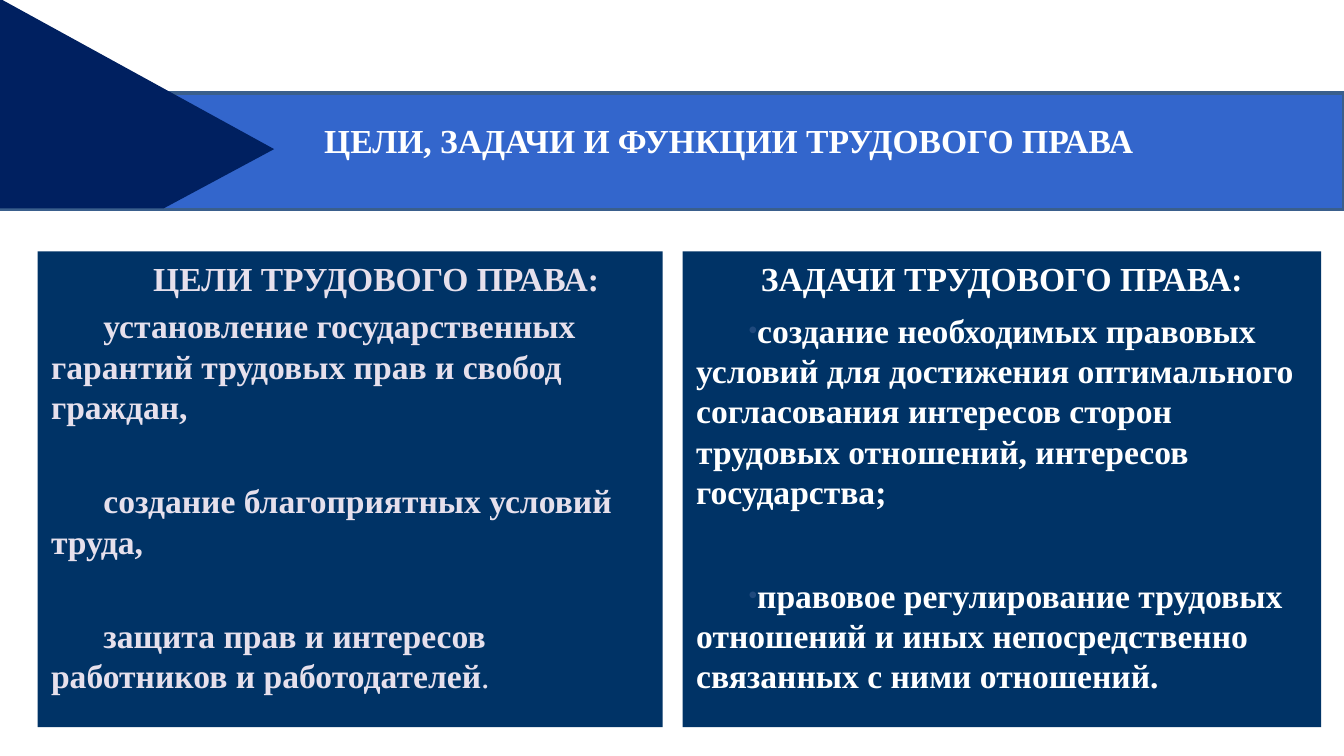
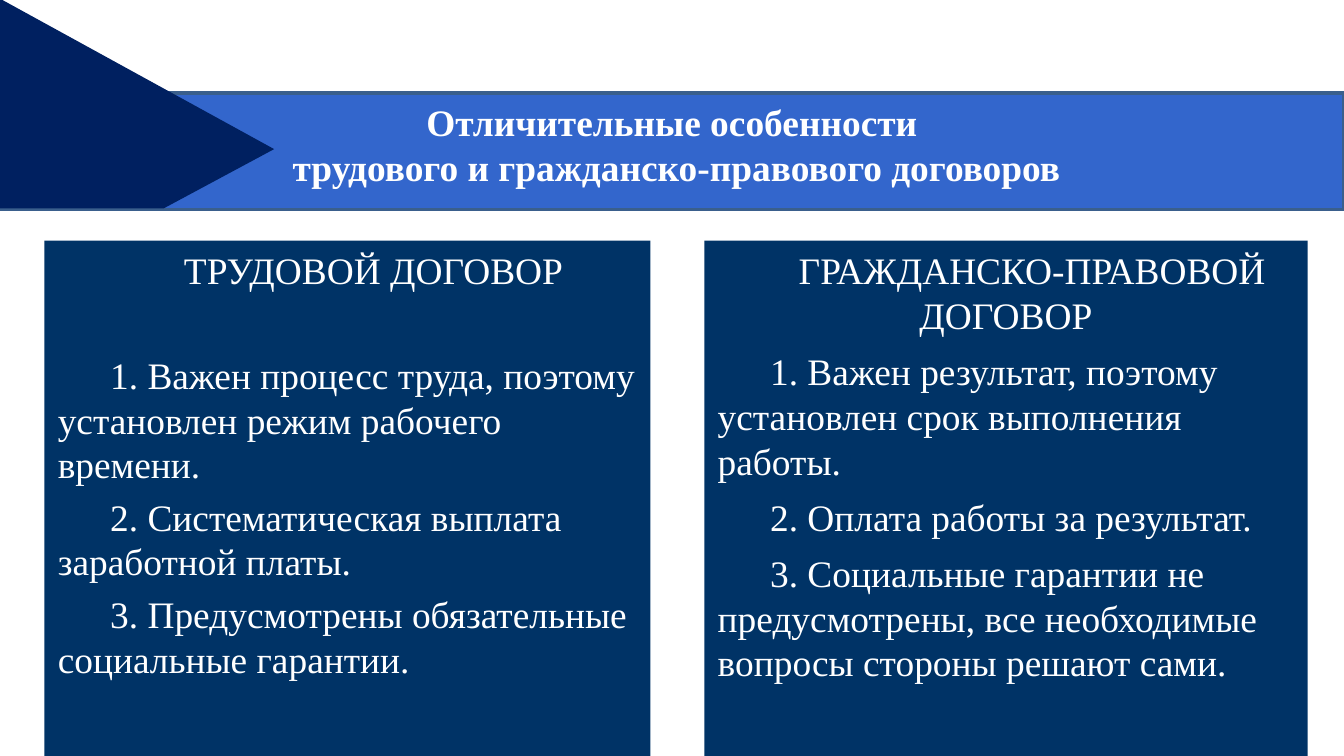
import pptx
import pptx.dml.color
import pptx.enum.shapes
import pptx.enum.text
import pptx.oxml
import pptx.oxml.ns
import pptx.util
from dataclasses import dataclass

Inches = pptx.util.Inches
Pt = pptx.util.Pt
RGBColor = pptx.dml.color.RGBColor
ALIGN = pptx.enum.text.PP_ALIGN
ANCHOR = pptx.enum.text.MSO_ANCHOR

WHITE = RGBColor(0xFF, 0xFF, 0xFF)
LILAC = RGBColor(0xE6, 0xE0, 0xEC)
BAND_BLUE = RGBColor(0x33, 0x66, 0xCC)
BAND_EDGE = RGBColor(0x3A, 0x5F, 0x8C)
ARROW_NAVY = RGBColor(0x00, 0x20, 0x60)
PANEL_NAVY = RGBColor(0x00, 0x33, 0x66)
BULLET_BLUE = RGBColor(0x1F, 0x49, 0x7D)
FONT = "Times New Roman"
PAGE_WIDTH = Inches(10)
PAGE_HEIGHT = PAGE_WIDTH * 9 // 16
FIRST_LINE = 0.39
HANGING = (0.3, -0.3)
ARROW_POINTS = [(0, -0.01), (2.04, 1.11), (1.22, 1.55), (0, 1.55)]


@dataclass
class Panel:
    """A heading and items; an item is (text, space before in points)."""
    place: tuple
    heading: str
    heading_indent: tuple
    items: list
    color: RGBColor = WHITE
    bulleted: bool = False
    plain_ending: str = ""


SLIDES = [
    {
        "title": ["ЦЕЛИ, ЗАДАЧИ И ФУНКЦИИ ТРУДОВОГО ПРАВА"],
        "title_place": (2.01, 0.84, 6.83, 0.4),
        "title_indent": (0, 0),
        "size": 18,
        "bold": True,
        "panels": [
            Panel((0.28, 1.87, 4.65, 3.54), "ЦЕЛИ ТРУДОВОГО ПРАВА:", (FIRST_LINE, 0), [
                ("установление государственных гарантий трудовых прав и свобод граждан,", 3.6),
                ("создание благоприятных условий труда,", 29),
                ("защита прав и интересов работников и работодателей", 29),
            ], color=LILAC, plain_ending="."),
            Panel((5.08, 1.87, 4.75, 3.54), "ЗАДАЧИ ТРУДОВОГО ПРАВА:", HANGING, [
                ("создание необходимых правовых условий для достижения оптимального "
                 "согласования интересов сторон трудовых отношений, интересов государства;", 6),
                ("правовое регулирование трудовых отношений и иных непосредственно "
                 "связанных с ними отношений.", 34),
            ], bulleted=True),
        ],
    },
    {
        "title": ["Отличительные особенности ", "трудового и гражданско-правового договоров"],
        "title_place": (0.98, 0.69, 8.11, 0.77),
        "title_indent": HANGING,
        "size": 20,
        "bold": False,
        "panels": [
            Panel((0.33, 1.79, 4.51, 3.84), "ТРУДОВОЙ ДОГОВОР", (0, FIRST_LINE), [
                ("1. Важен процесс труда, поэтому установлен режим рабочего времени.", 32),
                ("2. Систематическая выплата заработной платы.", 4),
                ("3. Предусмотрены обязательные социальные гарантии.", 4),
            ]),
            Panel((5.24, 1.79, 4.49, 3.84), "ГРАЖДАНСКО-ПРАВОВОЙ ДОГОВОР", (0, FIRST_LINE), [
                ("1. Важен результат, поэтому установлен срок выполнения работы.", 6),
                ("2. Оплата работы за результат.", 6),
                ("3. Социальные гарантии не предусмотрены, все необходимые вопросы "
                 "стороны решают сами.", 6),
            ]),
        ],
    },
]


def place_box(box, place, anchor):
    box.left, box.top, box.width, box.height = map(Inches, place)
    frame = box.text_frame
    frame.word_wrap = True
    frame.auto_size = pptx.enum.text.MSO_AUTO_SIZE.NONE
    frame.vertical_anchor = anchor
    return frame


def add_bullet_part(properties, tag, **attributes):
    part = pptx.oxml.ns.qn(f"a:{tag}")
    child = properties.makeelement(part, attributes)
    properties.append(child)
    return child


def format_paragraph(para, align, indent, before, size, color, bold, bulleted=False):
    para.alignment = align
    para.space_before = Pt(before)
    properties = para._p.get_or_add_pPr()
    properties.set("marL", str(Inches(indent[0])))
    properties.set("indent", str(Inches(indent[1])))
    if bulleted:
        bullet_color = add_bullet_part(properties, "buClr")
        add_bullet_part(bullet_color, "srgbClr", val=str(BULLET_BLUE))
        add_bullet_part(properties, "buSzPct", val="73000")
        add_bullet_part(properties, "buChar", char="•")
    else:
        add_bullet_part(properties, "buNone")
    for span in para.runs:
        span.font.name = FONT
        span.font.size = Pt(size)
        span.font.bold = bold
        span.font.color.rgb = color


def add_header(slide):
    """Draw the band and the arrow behind the placeholders."""
    band = slide.shapes.add_shape(pptx.enum.shapes.MSO_SHAPE.RECTANGLE,
                                  0, Inches(0.69), PAGE_WIDTH, Inches(0.87))
    band.line.color.rgb = BAND_EDGE
    band.line.width = Pt(2)
    corners = [(Inches(x), Inches(y)) for x, y in ARROW_POINTS]
    outline = slide.shapes.build_freeform(*corners[0])
    outline.add_line_segments(corners[1:], close=True)
    arrow = outline.convert_to_shape()
    arrow.line.fill.background()
    tree = band.element.getparent()
    for position, (shape, color) in enumerate([(band, BAND_BLUE), (arrow, ARROW_NAVY)], 2):
        shape.shadow.inherit = False
        shape.fill.solid()
        shape.fill.fore_color.rgb = color
        tree.insert(position, shape.element)


def fill_title(box, content):
    frame = place_box(box, content["title_place"], ANCHOR.TOP)
    frame.text = "\n".join(content["title"])
    for para in frame.paragraphs:
        format_paragraph(para, ALIGN.CENTER, content["title_indent"], 0,
                         content["size"], WHITE, True)


def fill_panel(box, panel, size, bold):
    frame = place_box(box, panel.place, ANCHOR.TOP)
    box.fill.solid()
    box.fill.fore_color.rgb = PANEL_NAVY
    frame.text = "\n".join([panel.heading] + [text for text, before in panel.items])
    heading, *paras = frame.paragraphs
    format_paragraph(heading, ALIGN.CENTER, panel.heading_indent, 0, size, panel.color, bold)
    if panel.plain_ending:
        paras[-1].add_run().text = panel.plain_ending
    for para, (text, before) in zip(paras, panel.items):
        format_paragraph(para, ALIGN.LEFT, (0, FIRST_LINE), before, size,
                         panel.color, bold, panel.bulleted)
    if panel.plain_ending:
        paras[-1].runs[-1].font.bold = False


def main():
    deck = pptx.Presentation()
    deck.slide_width, deck.slide_height = PAGE_WIDTH, PAGE_HEIGHT
    two_content = deck.slide_layouts[3]
    for content in SLIDES:
        page = deck.slides.add_slide(two_content)
        title, *boxes = list(page.placeholders)
        fill_title(title, content)
        for box, panel in zip(boxes, content["panels"]):
            fill_panel(box, panel, content["size"], content["bold"])
        add_header(page)
    deck.save("out.pptx")


if __name__ == "__main__":
    main()
